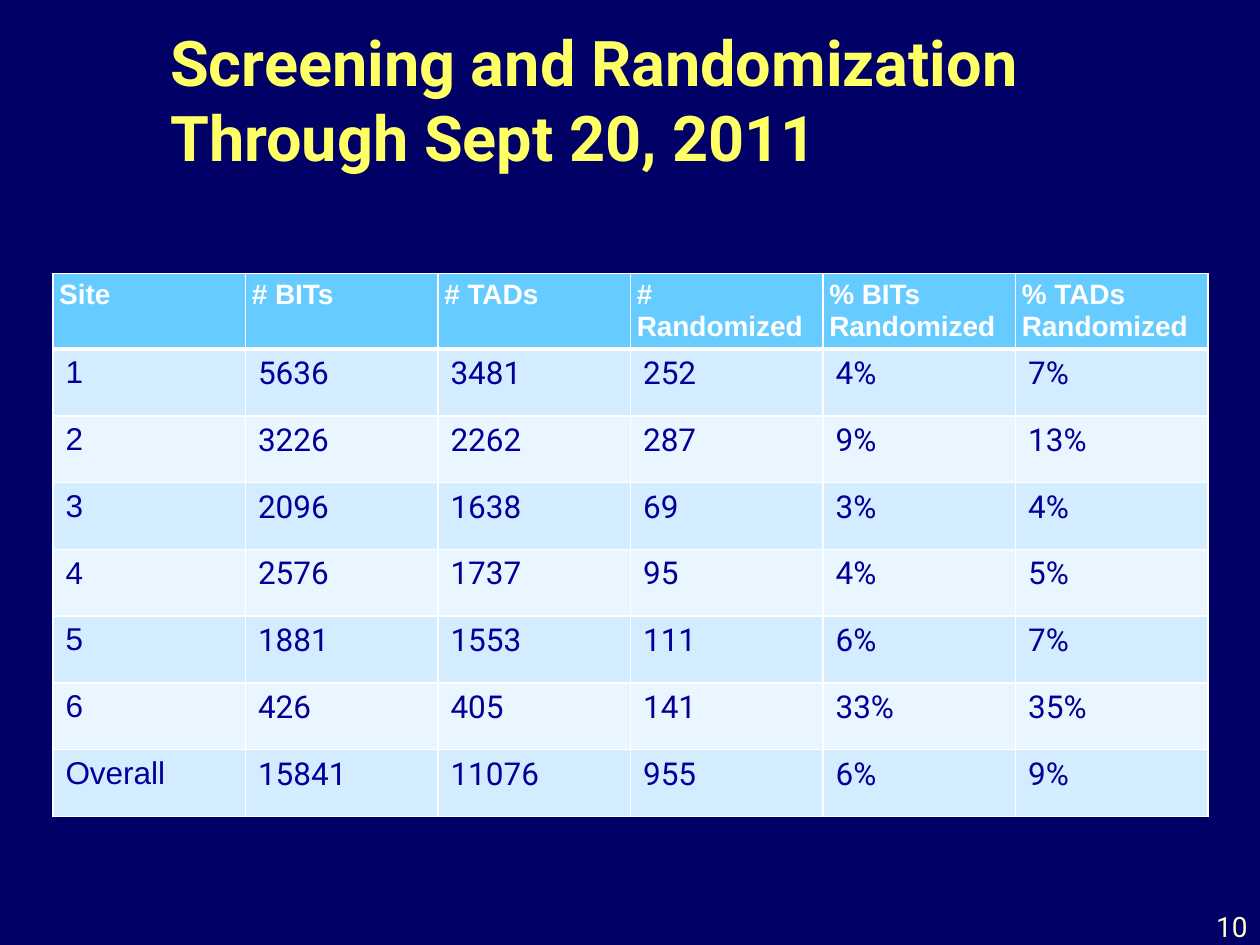
import pptx
import pptx.dml.color
import pptx.enum.text
import pptx.oxml
import pptx.oxml.ns
import pptx.util

Inches = pptx.util.Inches
Pt = pptx.util.Pt
RGBColor = pptx.dml.color.RGBColor
PP_ALIGN = pptx.enum.text.PP_ALIGN
MSO_ANCHOR = pptx.enum.text.MSO_ANCHOR

NAVY = RGBColor(0x00, 0x00, 0x66)
YELLOW = RGBColor(0xFF, 0xFF, 0x66)
CREAM = RGBColor(0xFF, 0xFF, 0xCC)
WHITE = RGBColor(0xFF, 0xFF, 0xFF)
SKY = RGBColor(0x66, 0xCC, 0xFF)
BANDS = (RGBColor(0xD3, 0xEC, 0xFF), RGBColor(0xEA, 0xF6, 0xFF))
INK = RGBColor(0x00, 0x00, 0x99)

HEADINGS = ("Site", "# BITs", "# TADs", "# Randomized",
            "% BITs Randomized", "% TADs Randomized")
SITES = (
    ("1", "5636", "3481", "252", "4%", "7%"),
    ("2", "3226", "2262", "287", "9%", "13%"),
    ("3", "2096", "1638", "69", "3%", "4%"),
    ("4", "2576", "1737", "95", "4%", "5%"),
    ("5", "1881", "1553", "111", "6%", "7%"),
    ("6", "426", "405", "141", "33%", "35%"),
    ("Overall", "15841", "11076", "955", "6%", "9%"),
)


class SlideBuilder:
    """Holds the deck's style and the slide being built."""

    heading_font = "Roboto"
    label_font = "Arial"

    def __init__(self, deck):
        self.slide = deck.slides.add_slide(deck.slide_layouts[5])
        background = self.slide.background.fill
        background.solid()
        background.fore_color.rgb = NAVY

    def set_text(self, frame, text, font, size, color, bold=False, align=PP_ALIGN.LEFT):
        frame.text = text
        frame.word_wrap = True
        paragraph = frame.paragraphs[0]
        paragraph.alignment = align
        paragraph.font.name = font
        paragraph.font.size = Pt(size)
        paragraph.font.bold = bold
        paragraph.font.color.rgb = color

    def title(self, text, left, top, width, height):
        heading = self.slide.shapes.title
        heading.left, heading.top = Inches(left), Inches(top)
        heading.width, heading.height = Inches(width), Inches(height)
        self.set_text(heading.text_frame, text, self.heading_font, 36, YELLOW, bold=True)
        heading.text_frame.auto_size = pptx.enum.text.MSO_AUTO_SIZE.NONE
        heading.text_frame.vertical_anchor = MSO_ANCHOR.MIDDLE

    def page_number(self, text, left, top, width, height):
        number = self.slide.shapes.add_textbox(
            Inches(left), Inches(top), Inches(width), Inches(height))
        self.set_text(number.text_frame, text, self.heading_font, 16, CREAM,
                      align=PP_ALIGN.RIGHT)

    def borders(self, cell, top=1, bottom=1):
        properties = cell._tc.get_or_add_tcPr()
        sides = (("lnL", 1), ("lnR", 1), ("lnT", top), ("lnB", bottom))
        for position, (side, points) in enumerate(sides):
            # Border elements come before the cell's fill
            properties.insert(position, pptx.oxml.parse_xml(
                f'<a:{side} {pptx.oxml.ns.nsdecls("a")} w="{int(Pt(points))}">'
                f'<a:solidFill><a:srgbClr val="{WHITE}"/></a:solidFill></a:{side}>'))

    def table(self, headings, rows, left, top, width, header_height, row_height):
        grid = self.slide.shapes.add_table(
            len(rows) + 1, len(headings), Inches(left), Inches(top), Inches(width),
            Inches(header_height + row_height * len(rows))).table
        for row_index, values in enumerate((headings, *rows)):
            is_header = row_index == 0
            grid.rows[row_index].height = Inches(header_height if is_header else row_height)
            for column, value in enumerate(values):
                cell = grid.cell(row_index, column)
                cell.fill.solid()
                if is_header:
                    cell.fill.fore_color.rgb = SKY
                    cell.margin_left = cell.margin_right = Inches(0.05)
                    self.set_text(cell.text_frame, value, self.label_font, 16, WHITE, bold=True)
                else:
                    cell.fill.fore_color.rgb = BANDS[(row_index - 1) % 2]
                    font = self.label_font if column == 0 else self.heading_font
                    self.set_text(cell.text_frame, value, font, 18, INK)
                # The rule under the header is heavier, seen from both rows
                self.borders(cell, top=3 if row_index == 1 else 1,
                             bottom=3 if is_header else 1)


def main():
    deck = pptx.Presentation()
    deck.slide_width, deck.slide_height = Inches(10), Inches(7.5)
    builder = SlideBuilder(deck)

    # Heading
    builder.title("Screening and Randomization Through Sept 20, 2011", 1.25, 0, 8.25, 1.57)

    # Counts and rates by site
    builder.table(HEADINGS, SITES, 0.42, 2.17, 9.17, 0.6, 0.53)

    # Footer
    builder.page_number("10", 8.92, 7.17, 1.08, 0.5)

    deck.save("out.pptx")


if __name__ == "__main__":
    main()
